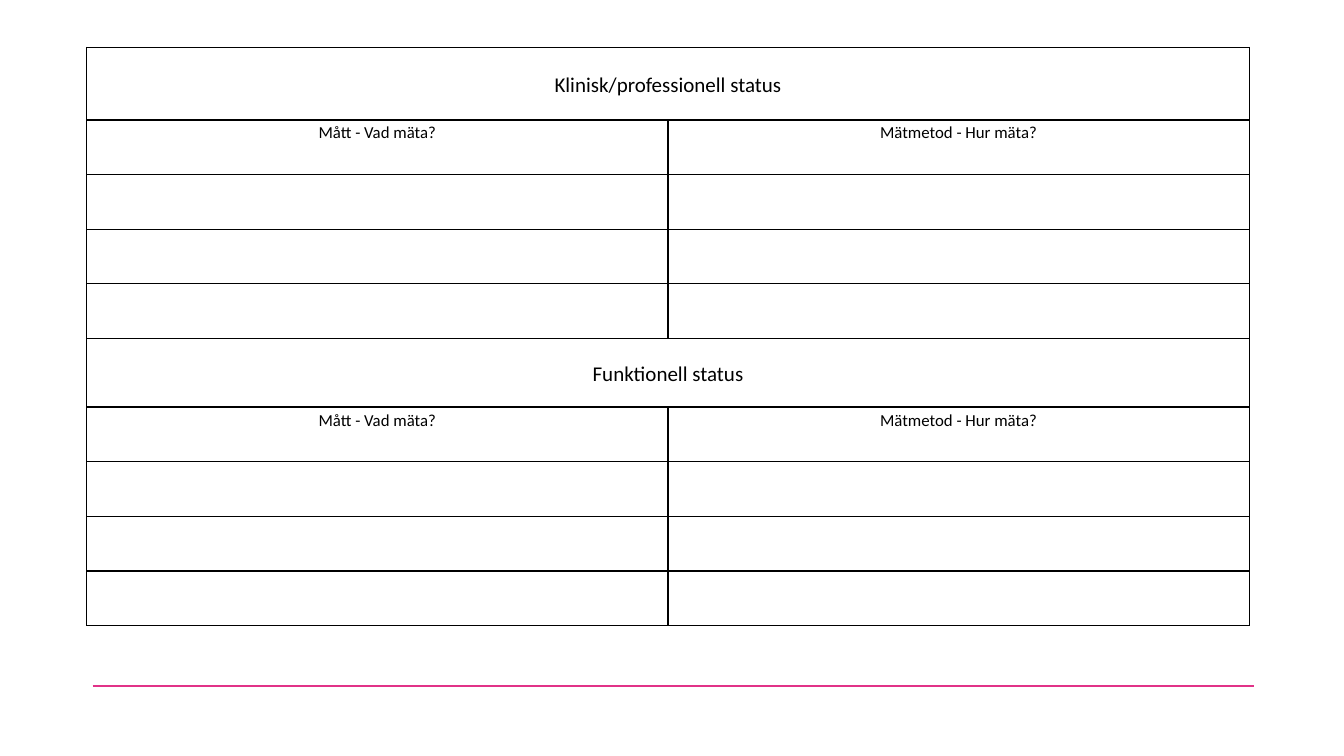
from lxml import etree
from pptx import Presentation
from pptx import util as u
from pptx.dml.color import RGBColor
from pptx.enum import shapes, text
from pptx.oxml.ns import qn

# Content: each section has a heading, a row of labels and empty rows to fill in
HEADINGS = ["Klinisk/professionell status", "Funktionell status"]
LABELS = ["Mått - Vad mäta?", "Mätmetod - Hur mäta?"]
EMPTY_ROWS = 3

# Layout in inches
SLIDE_W, SLIDE_H = 13.33, 7.5
TABLE_X, TABLE_Y, TABLE_W, TABLE_H = 0.86, 0.47, 11.53, 5.74
HEADING_HEIGHTS = [0.72, 0.68]
RULE_X, RULE_Y, RULE_W = 0.92, 6.81, 11.52
SECTION_ROWS = 2 + EMPTY_ROWS
ROW_COUNT = SECTION_ROWS * len(HEADINGS)
ROW_H = (TABLE_H - sum(HEADING_HEIGHTS)) / (ROW_COUNT - len(HEADINGS))

FONT, BLACK, WHITE, PINK = "Calibri", "000000", "FFFFFF", "E13288"


def color(value):
    return RGBColor.from_string(value)


def style_cell(cell):
    cell.margin_left = cell.margin_right = u.Inches(0.07)
    cell.margin_top = cell.margin_bottom = 0
    cell.fill.solid()
    cell.fill.fore_color.rgb = color(WHITE)
    props = cell._tc.get_or_add_tcPr()
    for place, side in enumerate(["lnL", "lnR", "lnT", "lnB"]):
        border = etree.Element(qn(f"a:{side}"), w=str(u.Pt(1)))
        fill = etree.SubElement(border, qn("a:solidFill"))
        etree.SubElement(fill, qn("a:srgbClr"), val=BLACK)
        props.insert(place, border)


def write(cell, words, size):
    para = cell.text_frame.paragraphs[0]
    para.alignment = text.PP_ALIGN.CENTER
    para.line_spacing = 1.15
    span = para.add_run()
    span.text = words
    span.font.name = FONT
    span.font.size = u.Pt(size)
    span.font.color.rgb = color(BLACK)


deck = Presentation()
deck.slide_width, deck.slide_height = u.Inches(SLIDE_W), u.Inches(SLIDE_H)
page = deck.slides.add_slide(deck.slide_layouts[6])

# Pink rule at the foot
rule = page.shapes.add_connector(
    shapes.MSO_CONNECTOR.STRAIGHT, u.Inches(RULE_X), u.Inches(RULE_Y),
    u.Inches(RULE_X + RULE_W), u.Inches(RULE_Y))
rule.line.color.rgb = color(PINK)
rule.line.width = u.Pt(1.5)
etree.SubElement(rule._element.spPr, qn("a:effectLst"))

# Empty bordered table
table = page.shapes.add_table(
    ROW_COUNT, len(LABELS), u.Inches(TABLE_X), u.Inches(TABLE_Y),
    u.Inches(TABLE_W), u.Inches(TABLE_H)).table
table.first_row = table.horz_banding = False
for column in table.columns:
    column.width = u.Inches(TABLE_W / len(LABELS))
for row in table.rows:
    row.height = u.Inches(ROW_H)
for cell in table.iter_cells():
    style_cell(cell)

# Headings and labels of both sections
for section, (heading, height) in enumerate(zip(HEADINGS, HEADING_HEIGHTS)):
    top = section * SECTION_ROWS
    table.rows[top].height = u.Inches(height)
    title = table.cell(top, 0)
    title.merge(table.cell(top, len(LABELS) - 1))
    title.vertical_anchor = text.MSO_ANCHOR.MIDDLE
    write(title, heading, 15)
    for col, label in enumerate(LABELS):
        write(table.cell(top + 1, col), label, 12)

deck.save("out.pptx")
